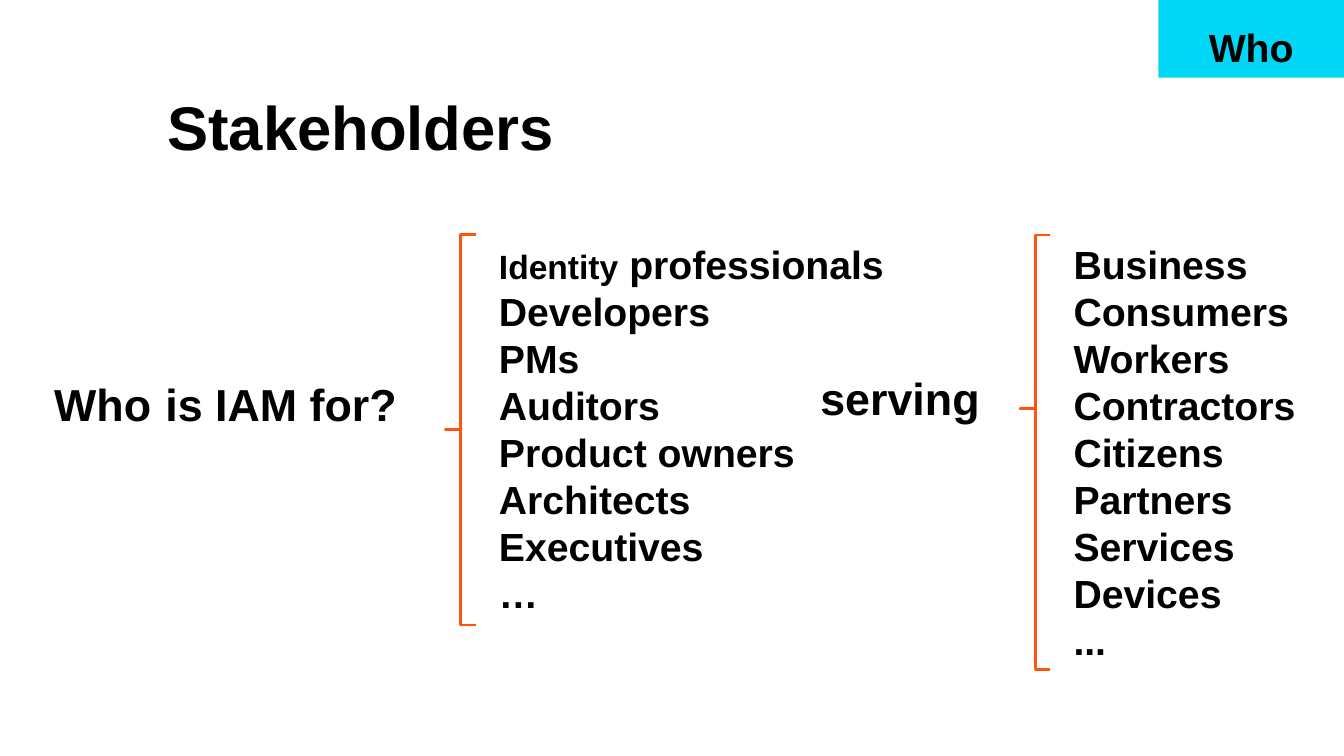
import pptx
import pptx.dml.color
import pptx.enum.shapes
import pptx.enum.text
import pptx.oxml
import pptx.util

Pt = pptx.util.Pt
PP_ALIGN = pptx.enum.text.PP_ALIGN
MSO_ANCHOR = pptx.enum.text.MSO_ANCHOR
MSO_SHAPE = pptx.enum.shapes.MSO_SHAPE

BLACK = pptx.dml.color.RGBColor(0x00, 0x00, 0x00)
ORANGE = pptx.dml.color.RGBColor(0xFF, 0x54, 0x0A)
CYAN = pptx.dml.color.RGBColor(0x00, 0xD7, 0xF7)

SLIDE_WIDTH, SLIDE_HEIGHT = 960, 540
LISTS_TOP = 167.8
LABELS_TOP = 261.4
BRACE_GAP = 31
BRACE_WIDTH = 21.6

PROVIDERS = [
    [("Identity", 24, True), (" ", 28, False), ("professionals", 28, True)],
    "Developers", "PMs", "Auditors", "Product owners", "Architects",
    "Executives", "…",
]
SERVED = [
    "Business", "Consumers", "Workers", "Contractors", "Citizens",
    "Partners", "Services", "Devices", "...",
]
QUESTION = [("Who", 32, True), (" ", 36, True), ("is IAM for?", 32, True)]


def place(part, left, top, width, height):
    part.left, part.top = Pt(left), Pt(top)
    part.width, part.height = Pt(width), Pt(height)


def write(frame, lines, size=28, align=PP_ALIGN.LEFT, anchor=MSO_ANCHOR.TOP,
          wrap=True, spacing=1.0):
    frame.auto_size = pptx.enum.text.MSO_AUTO_SIZE.NONE
    frame.word_wrap = wrap
    frame.vertical_anchor = anchor
    for index, line in enumerate(lines):
        paragraph = frame.paragraphs[0] if index == 0 else frame.add_paragraph()
        paragraph.alignment = align
        paragraph.line_spacing = spacing
        paragraph.space_before = Pt(0)
        pieces = [(line, size, True)] if isinstance(line, str) else line
        for wording, points, bold in pieces:
            run = paragraph.add_run()
            run.text = wording
            run.font.name = "Arial"
            run.font.size = Pt(points)
            run.font.bold = bold
            run.font.color.rgb = BLACK


def add_heading(slide, left, top, width, height):
    heading = slide.shapes.title
    place(heading, left, top, width, height)
    write(heading.text_frame, ["Stakeholders"], size=44,
          anchor=MSO_ANCHOR.MIDDLE, spacing=0.9)


def add_corner_tag(slide, left, top, width, height):
    tag = slide.shapes.add_shape(
        MSO_SHAPE.RECTANGLE, Pt(left), Pt(top), Pt(width), Pt(height))
    tag.shadow.inherit = False
    tag.fill.solid()
    tag.fill.fore_color.rgb = CYAN
    tag.line.fill.background()
    frame = tag.text_frame
    frame.margin_left, frame.margin_right = Pt(0), Pt(36)
    frame.margin_top, frame.margin_bottom = Pt(14.4), Pt(3.6)
    write(frame, ["Who"], align=PP_ALIGN.RIGHT, anchor=MSO_ANCHOR.MIDDLE)


def add_label(slide, line, left, top, width, height):
    label = slide.shapes.add_textbox(Pt(left), Pt(top), Pt(width), Pt(height))
    write(label.text_frame, [line], size=32, wrap=False)


def add_braced_list(slide, members, entries, left, top, width, height,
                    brace_height, point_at):
    brace = slide.shapes.add_shape(
        MSO_SHAPE.LEFT_BRACE, Pt(left - BRACE_GAP), Pt(top),
        Pt(BRACE_WIDTH), Pt(brace_height))
    brace.shadow.inherit = False
    brace.fill.background()
    brace.line.color.rgb = ORANGE
    brace.line.width = Pt(2)
    brace.adjustments[0] = 0
    brace.adjustments[1] = point_at

    place(members, left, top, width, height)
    write(members.text_frame, entries)
    for paragraph in members.text_frame.paragraphs:
        properties = paragraph._p.get_or_add_pPr()
        properties.set("marL", "0")
        properties.set("indent", "0")
        properties.append(pptx.oxml.parse_xml(
            '<a:buNone xmlns:a='
            '"http://schemas.openxmlformats.org/drawingml/2006/main"/>'))


def main():
    deck = pptx.Presentation()
    deck.slide_width, deck.slide_height = Pt(SLIDE_WIDTH), Pt(SLIDE_HEIGHT)
    slide = deck.slides.add_slide(deck.slide_layouts.get_by_name("Two Content"))
    providers, served = slide.placeholders[1], slide.placeholders[2]

    add_heading(slide, 112.3, 41, 763.2, 104.4)
    add_corner_tag(slide, 827.5, 0, SLIDE_WIDTH - 827.5, 55.5)
    add_label(slide, QUESTION, 31.7, LABELS_TOP, 261.4, 51.1)
    add_braced_list(slide, providers, PROVIDERS, 349.2, LISTS_TOP, 292.3, 278.6,
                    brace_height=278.6, point_at=0.5)
    add_label(slide, "serving", 578.9, LABELS_TOP, 129.6, 46.1)
    add_braced_list(slide, served, SERVED, 759.6, LISTS_TOP, 175, 312.5,
                    brace_height=310.3, point_at=0.4)
    deck.save("out.pptx")


if __name__ == "__main__":
    main()
